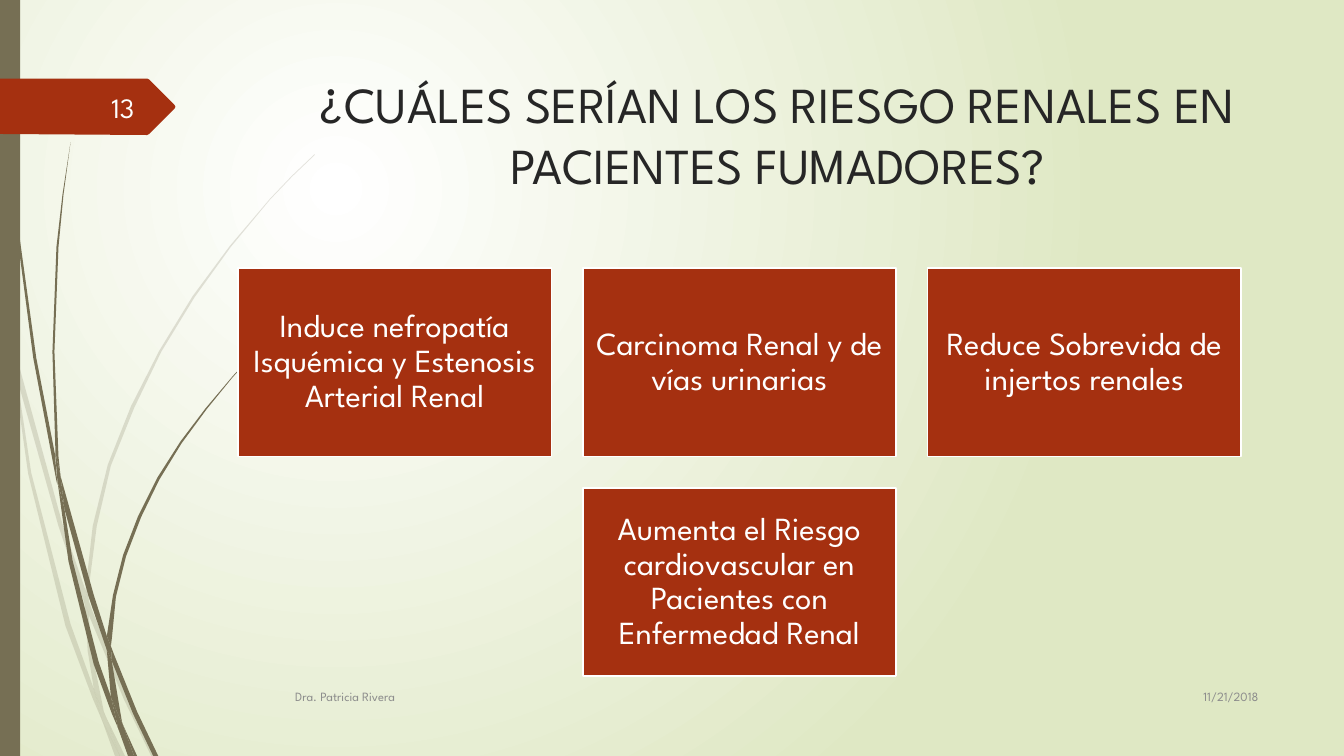
from lxml import etree
from pptx import Presentation
from pptx.dml.color import RGBColor
from pptx.enum.shapes import MSO_SHAPE
from pptx.enum.text import MSO_ANCHOR, MSO_AUTO_SIZE, PP_ALIGN
from pptx.oxml.ns import qn
from pptx.util import Inches, Pt

RECTANGLE = MSO_SHAPE.RECTANGLE
TOP, MIDDLE = MSO_ANCHOR.TOP, MSO_ANCHOR.MIDDLE
LEFT, CENTER, RIGHT = PP_ALIGN.LEFT, PP_ALIGN.CENTER, PP_ALIGN.RIGHT

FONT = "League Spartan"
WHITE = RGBColor(0xFF, 0xFF, 0xFF)
PALE_GREEN = RGBColor(0xDF, 0xE8, 0xC4)
OLIVE = RGBColor(0x76, 0x6F, 0x54)
RUST = RGBColor(0xA5, 0x30, 0x10)
DARK = RGBColor(0x26, 0x26, 0x26)
GRAY = RGBColor(0x8C, 0x8C, 0x8C)
NUMBER_WHITE = RGBColor(0xFE, 0xFF, 0xFF)

# Outlines of the grass blades, as x, y in inches.
FAINT_GRASS = [
    [(0.11, 3.5), (0.09, 3.22), (0, 2.82), (0, 2.99), (0.1, 3.44)],
    [(0.58, 5.22), (0.84, 5.99), (0.85, 5.86), (0.62, 5.2), (0.14, 3.45),
     (0.17, 3.76)],
    [(0.92, 6.07), (0.88, 5.96), (0.88, 6.1), (1.23, 6.94), (1.5, 7.5),
     (1.55, 7.5), (1.27, 6.92)],
    [(1.19, 7.5), (1.24, 7.5), (1.05, 7.11)],
    [(0.93, 6.83), (0.7, 6.19), (0.31, 4.69), (0.17, 3.76), (0.11, 3.5),
     (0.28, 4.7), (0.65, 6.21), (0.92, 6.93), (1.01, 7.14), (0.99, 7.07)],
    [(0.84, 5.99), (0.87, 6.46), (0.93, 6.83), (0.96, 6.92), (1.05, 7.11),
     (1.03, 7.06), (0.91, 6.46), (0.88, 6.1), (0.88, 6.08)],
    [(0.88, 5.84), (0.96, 5.22), (1.1, 4.62), (1.33, 4.05), (1.6, 3.49),
     (1.93, 2.95), (2.29, 2.45), (2.68, 1.98), (2.9, 1.75), (3.12, 1.54),
     (3.12, 1.53), (2.89, 1.75), (2.68, 1.97), (2.28, 2.44), (1.91, 2.94),
     (1.58, 3.48), (1.3, 4.03), (1.07, 4.61), (0.92, 5.22), (0.85, 5.84),
     (0.85, 5.86), (0.88, 5.96)],
    [(1.01, 7.14), (1.14, 7.5), (1.19, 7.5)],
    [(0.88, 6.08), (0.88, 6.1), (0.88, 5.96), (0.85, 5.86), (0.84, 5.99)],
    [(0.96, 6.92), (0.93, 6.83), (0.99, 7.07), (1.01, 7.14), (1.19, 7.5),
     (1.05, 7.11)],
]
SOLID_GRASS = [
    [(0.07, 1.1), (0.17, 2.33), (0.33, 3.55), (0.56, 4.77), (0.57, 4.81),
     (0.55, 4.57), (0.55, 4.53), (0.36, 3.55), (0.19, 2.32), (0.08, 1.09),
     (0.05, 0.48), (0.04, 0), (0.03, 0), (0.04, 0.48)],
    [(0.88, 5.92), (1.06, 6.45), (1.06, 6.31), (0.93, 5.9), (0.6, 4.72),
     (0.64, 5.05)],
    [(1.13, 6.49), (1.1, 6.41), (1.11, 6.56), (1.32, 7.08), (1.52, 7.5),
     (1.57, 7.5), (1.36, 7.06)],
    [(1.1, 6.91), (0.98, 6.57), (0.72, 5.56), (0.64, 5.05), (0.57, 4.77),
     (0.68, 5.57), (0.93, 6.59), (1.11, 7.08), (1.17, 7.22), (1.16, 7.17)],
    [(0.6, 4.72), (0.58, 4.53), (0.54, 3.49), (0.58, 2.45), (0.63, 1.93),
     (0.7, 1.41), (0.62, 1.93), (0.56, 2.45), (0.52, 3.49), (0.55, 4.49)],
    [(1.33, 7.5), (1.36, 7.5), (1.22, 7.19)],
    [(0.57, 4.77), (0.64, 5.05), (0.6, 4.72), (0.55, 4.49), (0.55, 4.53)],
    [(1.11, 6.33), (1.15, 5.92), (1.25, 5.52), (1.4, 5.13), (1.58, 4.76),
     (1.8, 4.4), (2.05, 4.06), (2.31, 3.74), (2.45, 3.59), (2.61, 3.44),
     (2.6, 3.44), (2.45, 3.58), (2.31, 3.73), (2.04, 4.05), (1.79, 4.38),
     (1.56, 4.74), (1.37, 5.12), (1.22, 5.51), (1.12, 5.91), (1.06, 6.31),
     (1.1, 6.41)],
    [(1.17, 7.22), (1.27, 7.5), (1.31, 7.5)],
    [(1.06, 6.45), (1.1, 6.91), (1.16, 7.06), (1.22, 7.19), (1.21, 7.16),
     (1.11, 6.56), (1.09, 6.51)],
    [(1.06, 6.45), (1.09, 6.51), (1.11, 6.56), (1.1, 6.41), (1.06, 6.31)],
    [(1.16, 7.06), (1.1, 6.91), (1.16, 7.17), (1.17, 7.22), (1.3, 7.5),
     (1.33, 7.5), (1.22, 7.19)],
]
BADGE = [(0, 0.78), (1.46, 0.78), (1.48, 0.79), (1.73, 1.04), (1.74, 1.06),
         (1.73, 1.08), (1.48, 1.33), (1.46, 1.34), (0, 1.33)]

# Text, column and row of each risk.
RISKS = [
    ("Induce nefropatía Isquémica y Estenosis Arterial Renal", 0, 0),
    ("Carcinoma Renal y de vías urinarias", 1, 0),
    ("Reduce Sobrevida de injertos renales", 2, 0),
    ("Aumenta el Riesgo cardiovascular en Pacientes con Enfermedad Renal", 1, 1),
]
RISK_WIDTH, RISK_HEIGHT, RISK_GAP = 3.11, 1.87, 0.31


class SlideBuilder:
    def __init__(self, page, font):
        self.page = page
        self.font = font

    def background(self, inner, outer):
        """Fill the page with a circular gradient centred at upper left."""
        fill = self.page.background.fill
        fill.gradient()
        for stop, color, position in zip(fill.gradient_stops, (inner, outer), (0, 1)):
            stop.color.rgb = color
            stop.position = position
        gradient = self.page.element.find(".//" + qn("a:gradFill"))
        linear = gradient.find(qn("a:lin"))
        circle = etree.Element(qn("a:path"), path="circle")
        etree.SubElement(circle, qn("a:fillToRect"),
                         l="50000", t="50000", r="100000", b="100000")
        gradient.replace(linear, circle)

    def paint(self, shape, color, opacity=100):
        shape.shadow.inherit = False
        shape.fill.solid()
        shape.fill.fore_color.rgb = color
        shape.line.fill.background()
        if opacity < 100:
            tint = shape.element.spPr.find(qn("a:solidFill"))[0]
            etree.SubElement(tint, qn("a:alpha"), val=str(opacity * 1000))

    def outline(self, points, color, opacity=100):
        corners = [(Inches(x), Inches(y)) for x, y in points]
        builder = self.page.shapes.build_freeform(*corners[0])
        builder.add_line_segments(corners[1:], close=True)
        self.paint(builder.convert_to_shape(), color, opacity)

    def rectangle(self, left, top, width, height, color):
        box = self.page.shapes.add_shape(
            RECTANGLE, Inches(left), Inches(top), Inches(width), Inches(height))
        self.paint(box, color)
        return box

    def set_text(self, box, text, size, color, align, anchor=MIDDLE):
        frame = box.text_frame
        frame.text = text
        frame.word_wrap = True
        frame.auto_size = MSO_AUTO_SIZE.NONE
        frame.vertical_anchor = anchor
        para = frame.paragraphs[0]
        para.alignment = align
        span = para.runs[0]
        span.font.name = self.font
        span.font.size = Pt(size)
        span.font.color.rgb = color
        return frame

    def title(self, text, left, top, width, height):
        box = self.page.shapes.title
        box.left, box.top = Inches(left), Inches(top)
        box.width, box.height = Inches(width), Inches(height)
        self.set_text(box, text, 36, DARK, CENTER, TOP)

    def label(self, text, left, top, width, height, size, color, align):
        box = self.page.shapes.add_textbox(
            Inches(left), Inches(top), Inches(width), Inches(height))
        self.set_text(box, text, size, color, align)

    def risk(self, text, column, row):
        box = self.rectangle(2.36 + column * (RISK_WIDTH + RISK_GAP),
                             2.66 + row * (RISK_HEIGHT + RISK_GAP),
                             RISK_WIDTH, RISK_HEIGHT, RUST)
        box.line.color.rgb = WHITE
        box.line.width = Pt(1.25)
        frame = self.set_text(box, text, 23, WHITE, CENTER)
        frame.margin_left = frame.margin_right = Inches(0.1)
        frame.margin_top = frame.margin_bottom = Inches(0.1)
        frame.paragraphs[0].line_spacing = 0.9


def main():
    deck = Presentation()
    deck.slide_width, deck.slide_height = Inches(13.33), Inches(7.5)
    slide = SlideBuilder(deck.slides.add_slide(deck.slide_layouts[5]), FONT)

    slide.background(WHITE, PALE_GREEN)
    for blade in FAINT_GRASS:
        slide.outline(blade, OLIVE, opacity=20)
    for blade in SOLID_GRASS:
        slide.outline(blade, OLIVE)
    slide.rectangle(0, 0, 0.2, 7.5, OLIVE)
    slide.outline(BADGE, RUST)

    slide.title("¿CUÁLES SERÍAN LOS RIESGO RENALES EN PACIENTES FUMADORES?",
                2.84, 0.68, 9.75, 1.4)
    slide.label("11/21/2018", 11.33, 6.7, 1.25, 0.41, 9, GRAY, RIGHT)
    slide.label("Dra. Patricia Rivera", 2.83, 6.71, 8.33, 0.4, 9, GRAY, LEFT)
    slide.label("13", 0.58, 0.86, 0.85, 0.4, 20, NUMBER_WHITE, RIGHT)
    for text, column, row in RISKS:
        slide.risk(text, column, row)

    deck.save("out.pptx")


if __name__ == "__main__":
    main()
